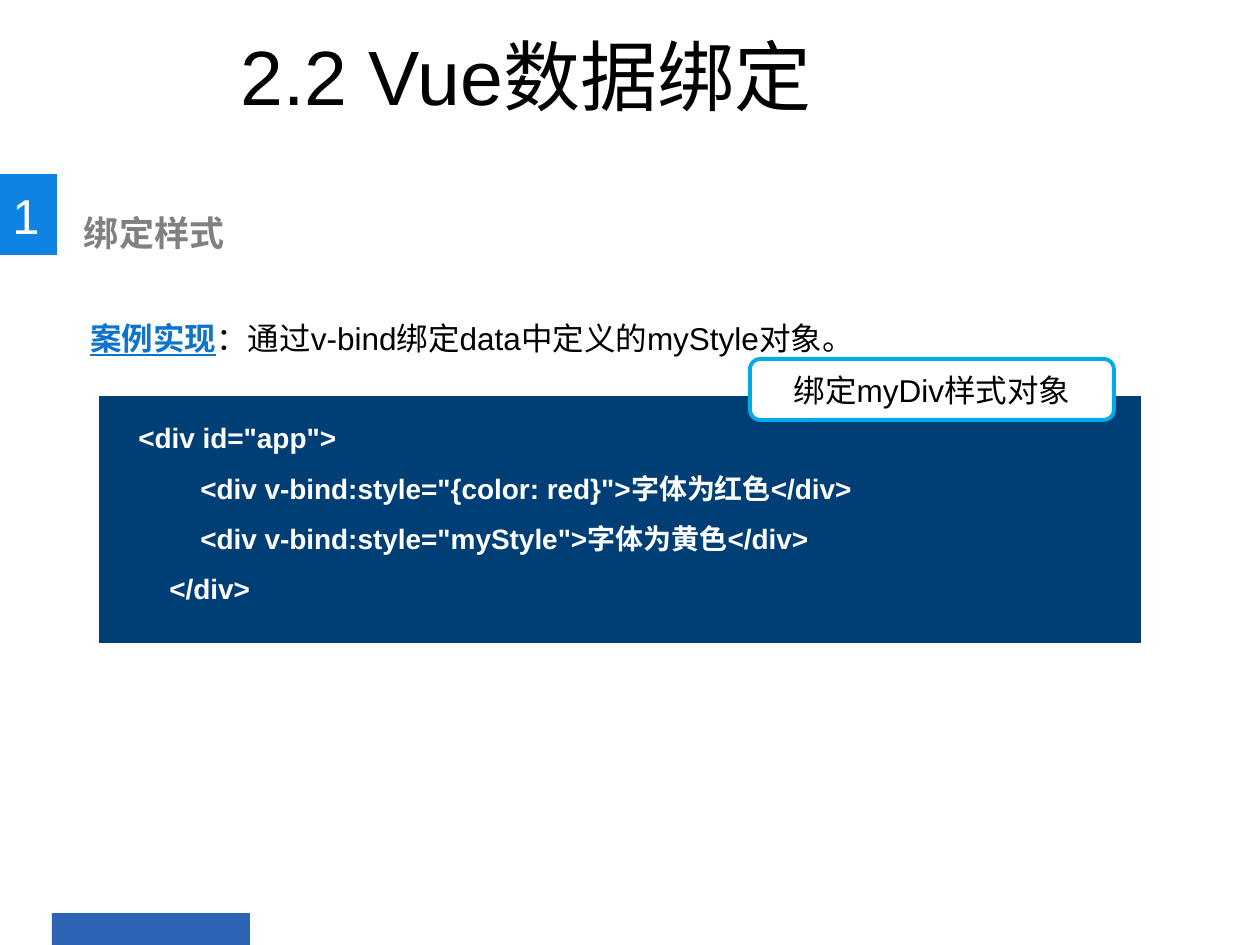
from pptx import Presentation
from pptx.dml.color import RGBColor
from pptx.enum.shapes import MSO_SHAPE
from pptx.enum.text import MSO_ANCHOR, PP_ALIGN
from pptx.oxml.ns import qn
from pptx.util import Pt

PX = 914400 // 126
BLACK = RGBColor(0x00, 0x00, 0x00)
WHITE = RGBColor(0xFF, 0xFF, 0xFF)
GREY = RGBColor(0x80, 0x80, 0x80)
FOOTER_BLUE = RGBColor(0x2D, 0x65, 0xB4)
BADGE_BLUE = RGBColor(0x0F, 0x83, 0xE3)
TERM_BLUE = RGBColor(0x0D, 0x74, 0xC9)
CODE_NAVY = RGBColor(0x00, 0x3F, 0x75)
CALLOUT_CYAN = RGBColor(0x00, 0xAC, 0xE6)

presentation = Presentation()
presentation.slide_width = 1260 * PX
presentation.slide_height = 945 * PX
slide = presentation.slides.add_slide(presentation.slide_layouts[6])


def add_box(kind, left, top, width, height, fill):
    shape = slide.shapes.add_shape(kind, left * PX, top * PX, width * PX, height * PX)
    shape.shadow.inherit = False
    shape.fill.solid()
    shape.fill.fore_color.rgb = fill
    shape.line.fill.background()
    return shape


def add_text(left, top, width, height, lines, size, color, bold=False, spacing=1.0):
    """Add a text box; each line is a list of run texts."""
    box = slide.shapes.add_textbox(left * PX, top * PX, width * PX, height * PX)
    box.text_frame.word_wrap = True
    for number, texts in enumerate(lines):
        paragraph = box.text_frame.paragraphs[0] if number == 0 else box.text_frame.add_paragraph()
        paragraph.line_spacing = spacing
        for text in texts:
            run = paragraph.add_run()
            run.text = text
            run.font.name = "Arial"
            run.font.size = Pt(size)
            run.font.bold = bold
            run.font.color.rgb = color
            east_asian = run.font._element.makeelement(qn("a:ea"), {"typeface": "Noto Sans CJK SC"})
            run.font._element.append(east_asian)
    return box


# Footer bar
add_box(MSO_SHAPE.RECTANGLE, 52, 913, 198, 32, FOOTER_BLUE)

# Title
title = add_text(228, 21, 650, 107, [["2.2 Vue数据绑定"]], 44, BLACK)
title.text_frame.vertical_anchor = MSO_ANCHOR.MIDDLE

# Section number and heading
add_box(MSO_SHAPE.RECTANGLE, 0, 174, 57, 81, BADGE_BLUE)
add_text(0, 179, 53, 72, [["1"]], 28, WHITE)
heading = add_text(84, 205, 623, 55, [["绑定样式"]], 20, GREY, bold=True)
heading.text_frame.margin_left = 0
heading.text_frame.paragraphs[0].runs[0].font.name = "Noto Sans CJK SC"

# Introduction
introduction = add_text(78, 275, 1090, 89,
                        [["案例实现", "：通过v-bind绑定data中定义的myStyle对象。"]],
                        18, BLACK, spacing=2.0)
term = introduction.text_frame.paragraphs[0].runs[0]
term.font.bold = True
term.font.underline = True
term.font.color.rgb = TERM_BLUE

# Code panel
add_box(MSO_SHAPE.RECTANGLE, 99, 396, 1042, 247, CODE_NAVY)
code_lines = [
    '<div id="app">',
    '        <div v-bind:style="{color: red}">字体为红色</div>',
    '        <div v-bind:style="myStyle">字体为黄色</div>',
    '    </div>',
]
add_text(126, 398, 1014, 217, [[line] for line in code_lines], 16, WHITE, bold=True, spacing=1.5)

# Callout
callout = add_box(MSO_SHAPE.ROUNDED_RECTANGLE, 750, 359, 364, 61, WHITE)
callout.adjustments[0] = 0.17
callout.line.color.rgb = CALLOUT_CYAN
callout.line.width = Pt(2.25)
label = add_text(750, 359, 364, 61, [["绑定myDiv样式对象"]], 18, BLACK)
label.text_frame.vertical_anchor = MSO_ANCHOR.MIDDLE
label.text_frame.paragraphs[0].alignment = PP_ALIGN.CENTER

presentation.save("out.pptx")
